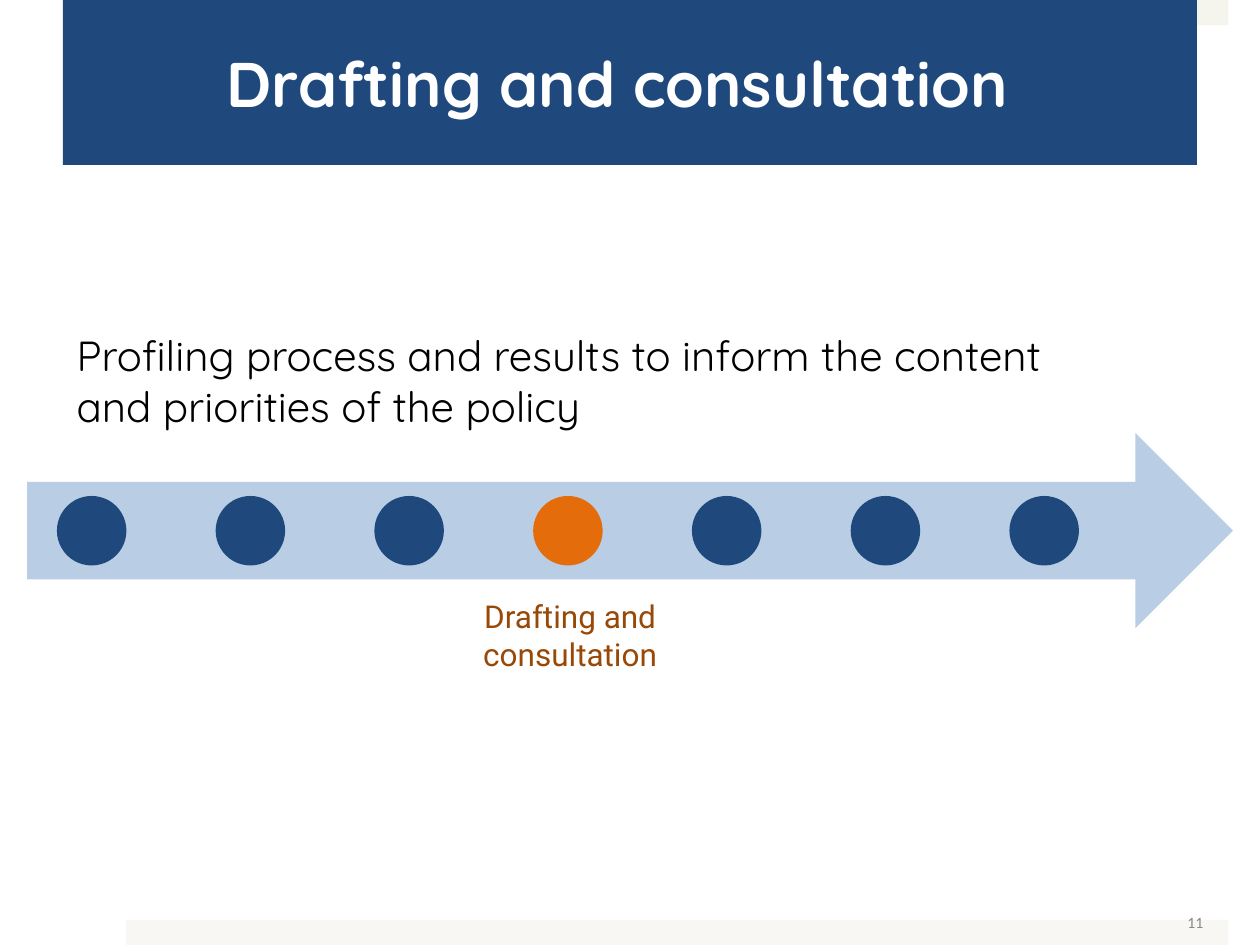
import pptx
import pptx.util
import pptx.dml.color
import pptx.enum.shapes
import pptx.enum.text

Pt = pptx.util.Pt
SHAPE = pptx.enum.shapes.MSO_SHAPE
ALIGN = pptx.enum.text.PP_ALIGN
ANCHOR = pptx.enum.text.MSO_ANCHOR
COLORS = {
    "navy": "1F497D", "arrow": "B9CDE5", "orange": "E46C0A",
    "brown": "984807", "top": "F5F4ED", "bottom": "F8F7F3",
    "gray": "898989", "white": "FFFFFF", "black": "000000",
}

prs = pptx.Presentation()
prs.slide_width, prs.slide_height = Pt(720), Pt(540)
s = prs.slides.add_slide(prs.slide_layouts[6])


def add_shape(kind, left, top, width, height, color):
    sp = s.shapes.add_shape(kind, Pt(left), Pt(top), Pt(width), Pt(height))
    sp.shadow.inherit = False
    sp.fill.solid()
    sp.fill.fore_color.rgb = pptx.dml.color.RGBColor.from_string(COLORS[color])
    sp.line.fill.background()
    return sp


def set_text(sp, text, size, font, color, align=ALIGN.LEFT, anchor=ANCHOR.TOP):
    tf = sp.text_frame
    tf.word_wrap = True
    tf.vertical_anchor = anchor
    p = tf.paragraphs[0]
    p.text = text
    p.alignment = align
    p.font.size = Pt(size)
    p.font.name = font
    p.font.color.rgb = pptx.dml.color.RGBColor.from_string(COLORS[color])
    return tf


# Background strips and slide number
add_shape(SHAPE.RECTANGLE, 72, 0, 630, 14.4, "top")
add_shape(SHAPE.RECTANGLE, 72, 525.6, 630, 14.4, "bottom")
number = s.shapes.add_textbox(Pt(524.88), Pt(512.64), Pt(167.76), Pt(28.8))
tf = set_text(number, "11", 9, "Calibri", "gray", ALIGN.RIGHT, ANCHOR.MIDDLE)
tf.margin_left = tf.margin_right = Pt(5)
tf.margin_top = tf.margin_bottom = Pt(3)

# Title banner
title = add_shape(SHAPE.RECTANGLE, 36, 0, 648, 94.3, "navy")
tf = set_text(title, "Drafting and consultation", 36, "Quicksand", "white",
              anchor=ANCHOR.MIDDLE)
tf.margin_left, tf.margin_right = Pt(93.6), Pt(21.6)
tf.paragraphs[0].font.bold = True

# Process arrow with seven steps, the fourth one current
add_shape(SHAPE.RIGHT_ARROW, 15.6, 247.5, 689, 111.5, "arrow")
for i in range(7):
    add_shape(SHAPE.OVAL, 32.5 + 90.72 * i, 283.4, 39.7, 39.7,
              "orange" if i == 3 else "navy")

# Label of the current step
label = s.shapes.add_textbox(Pt(252), Pt(337.7), Pt(147.6), Pt(51.1))
set_text(label, "Drafting and consultation", 18, "Roboto", "brown", ALIGN.CENTER)

# Main statement
body = s.shapes.add_textbox(Pt(36.7), Pt(185), Pt(611.3), Pt(277.2))
set_text(body, "Profiling process and results to inform the content "
         "and priorities of the policy", 24, "Quicksand", "black")

prs.save("out.pptx")
